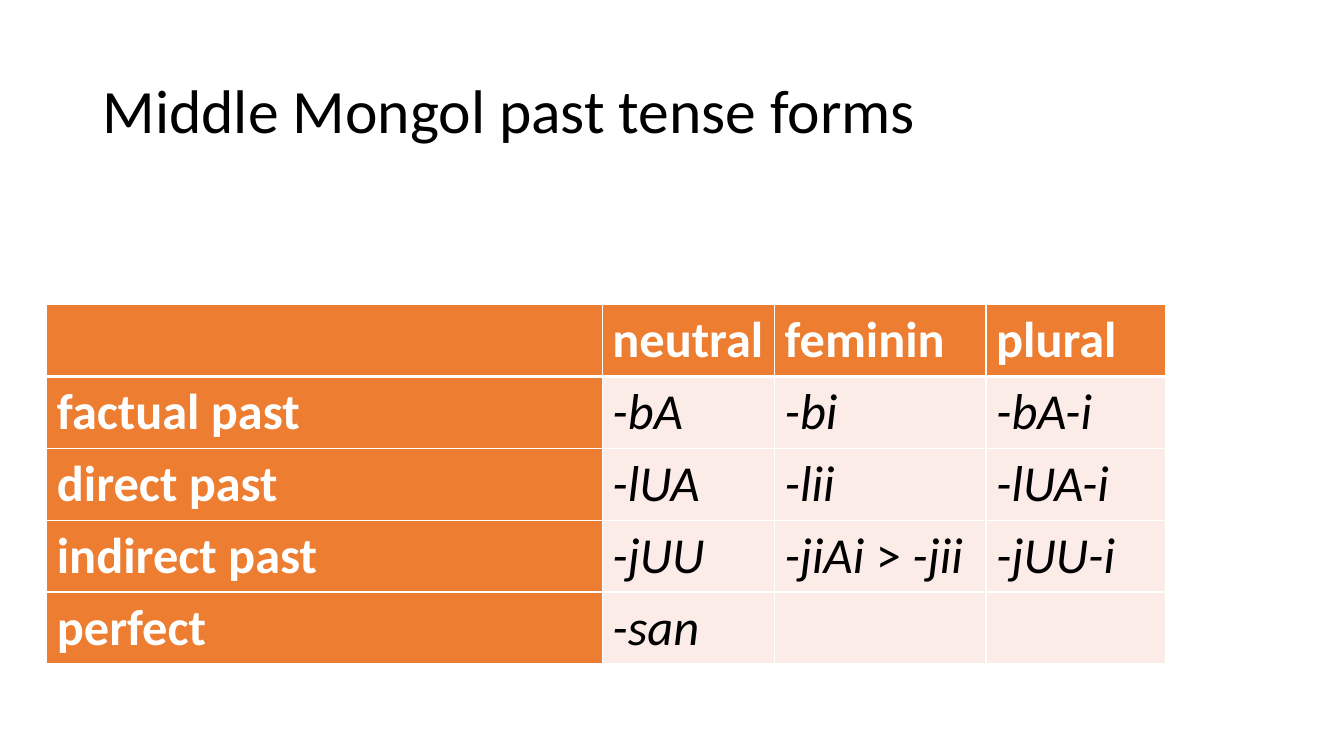
from lxml.etree import SubElement
from pptx import Presentation
from pptx.dml.color import RGBColor
from pptx.enum.text import MSO_ANCHOR, MSO_AUTO_SIZE, PP_ALIGN
from pptx.oxml.ns import qn
from pptx.util import Cm, Pt

TITLE = "Middle Mongol past tense forms"
FORMS = [
    ["", "neutral", "feminin", "plural"],
    ["factual past", "-bA", "-bi", "-bA-i"],
    ["direct past", "-lUA", "-lii", "-lUA-i"],
    ["indirect past", "-jUU", "-jiAi > -jii", "-jUU-i"],
    ["perfect", "-san", "", ""],
]
COLUMN_WIDTHS = [14, 4.34, 5.33, 4.52]
ROW_HEIGHT = 1.8
COLORS = {"heading": "ED7D31", "body": "FCECE8", "light": "FFFFFF", "dark": "000000"}
FONT = "Calibri"
TITLE_BOX = {"left": Cm(2.33), "top": Cm(1.01), "width": Cm(29.21), "height": Cm(3.68)}
TITLE_FRAME = {
    "vertical_anchor": MSO_ANCHOR.MIDDLE,
    "auto_size": MSO_AUTO_SIZE.NONE,
    "word_wrap": True,
}
TITLE_PARAGRAPH = {"alignment": PP_ALIGN.LEFT, "line_spacing": 0.9}
TITLE_FONT = {"name": FONT, "size": Pt(44)}
HEADING_FONT = {"name": FONT, "size": Pt(36), "bold": True, "italic": False}
FORM_FONT = {"name": FONT, "size": Pt(36), "bold": False, "italic": True}


def apply(target, values):
    for attribute, value in values.items():
        setattr(target, attribute, value)


def add_text(paragraph, text, values, color):
    run = paragraph.add_run()
    run.text = text
    apply(run.font, values)
    run.font.color.rgb = RGBColor.from_string(COLORS[color])


def add_borders(cell, top, bottom):
    properties = cell._tc.get_or_add_tcPr()
    for side, points in (("L", 1), ("R", 1), ("T", top), ("B", bottom)):
        line = SubElement(properties, qn(f"a:ln{side}"), w=str(Pt(points)))
        fill = SubElement(line, qn("a:solidFill"))
        SubElement(fill, qn("a:srgbClr"), val=COLORS["light"])


def add_title(slide):
    title = slide.shapes.title
    apply(title, TITLE_BOX)
    apply(title.text_frame, TITLE_FRAME)
    heading = title.text_frame.paragraphs[0]
    apply(heading, TITLE_PARAGRAPH)
    add_text(heading, TITLE, TITLE_FONT, "dark")


def fill_cell(cell, text, row, column):
    is_heading = row == 0 or column == 0
    add_borders(cell, 3 if row == 1 else 1, 3 if row == 0 else 1)
    cell.fill.solid()
    shade = "heading" if is_heading else "body"
    cell.fill.fore_color.rgb = RGBColor.from_string(COLORS[shade])
    paragraph = cell.text_frame.paragraphs[0]
    for part in filter(None, text.partition(">")):
        values = HEADING_FONT if is_heading else FORM_FONT
        if part == ">":
            values = {**values, "italic": False}
        add_text(paragraph, part, values, "light" if is_heading else "dark")


def add_forms(slide):
    table = slide.shapes.add_table(
        len(FORMS), len(COLUMN_WIDTHS), Cm(1.18), Cm(7.68),
        Cm(sum(COLUMN_WIDTHS)), Cm(ROW_HEIGHT * len(FORMS)),
    ).table
    for column, width in zip(table.columns, COLUMN_WIDTHS):
        column.width = Cm(width)
    for row, texts in enumerate(FORMS):
        for column, text in enumerate(texts):
            fill_cell(table.cell(row, column), text, row, column)


def main():
    deck = Presentation()
    deck.slide_width, deck.slide_height = Cm(33.87), Cm(19.05)
    slide = deck.slides.add_slide(deck.slide_layouts[5])
    add_title(slide)
    add_forms(slide)
    deck.save("out.pptx")


if __name__ == "__main__":
    main()
